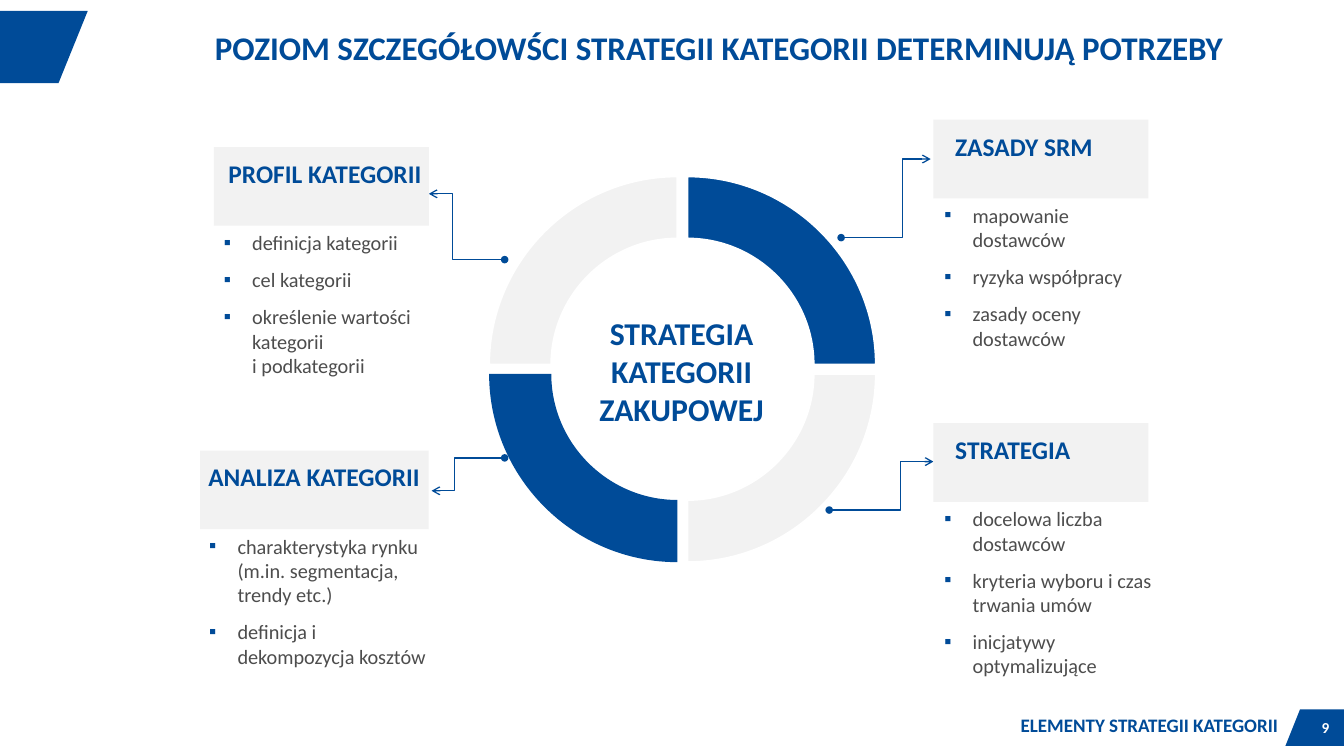
from lxml.etree import SubElement
from pptx import Presentation
from pptx.dml.color import RGBColor
from pptx.enum.shapes import MSO_CONNECTOR, MSO_SHAPE
from pptx.enum.text import MSO_ANCHOR, MSO_AUTO_SIZE, PP_ALIGN
from pptx.oxml.ns import qn
from pptx.util import Inches, Pt

BLUE = RGBColor(0x00, 0x4B, 0x98)
LIGHT = RGBColor(0xF2, 0xF2, 0xF2)
GREY = RGBColor(0x4D, 0x4D, 0x4D)
WHITE = RGBColor(0xFF, 0xFF, 0xFF)

TITLE = {"size": Pt(26), "bold": True}
FOOTER = {"size": Pt(15), "bold": True}
NUMBER = {"size": Pt(12), "bold": True}
CENTRE = {"size": Pt(25), "bold": True}
HEADING = {"size": Pt(20), "bold": True}
ITEM = {"size": Pt(16), "bold": False}

CARDS = [
    {"box": (2.34, 1.61, 2.35), "head": (-0.03, 2.41), "body": (0.01, 2.34),
     "title": "PROFIL KATEGORII",
     "items": ["definicja kategorii", "cel kategorii",
               "określenie wartości kategorii\ni podkategorii"]},
    {"box": (2.19, 4.93, 2.5), "head": (-0.1, 2.63), "body": (0, 2.7),
     "title": "ANALIZA KATEGORII",
     "items": ["charakterystyka rynku (m.in. segmentacja, trendy etc.)",
               "definicja i dekompozycja kosztów"]},
    {"box": (10.21, 1.31, 2.35), "head": (0.05, 2.36), "body": (0.02, 2.34),
     "title": "ZASADY SRM",
     "items": ["mapowanie dostawców", "ryzyka współpracy", "zasady oceny dostawców"]},
    {"box": (10.21, 4.63, 2.35), "head": (0.05, 2.33), "body": (0.02, 2.52),
     "title": "STRATEGIA",
     "items": ["docelowa liczba dostawców", "kryteria wyboru i czas trwania umów",
               "inicjatywy optymalizujące"]},
]
ARROWS = [(4.69, 2.12, 5.52, 2.84), (4.72, 5.37, 5.52, 5.01),
          (10.18, 1.74, 9.2, 2.6), (10.21, 5.05, 9.07, 5.58)]


def format_text(p, font, color):
    """Apply a font format and a colour to every run of a paragraph."""
    for r in p.runs:
        r.font.name = "Calibri"
        r.font.color.rgb = color
        for name, value in font.items():
            setattr(r.font, name, value)


def fill_frame(sp, lines, font, color=BLUE, inset=(0.1, 0.05), **paragraph):
    """Write lines as paragraphs into a shape and return its paragraphs."""
    tf = sp.text_frame
    tf.word_wrap = True
    tf.auto_size = MSO_AUTO_SIZE.NONE
    tf.vertical_anchor = MSO_ANCHOR.TOP
    tf.margin_left = tf.margin_right = Inches(inset[0])
    tf.margin_top = tf.margin_bottom = Inches(inset[1])
    for i, line in enumerate(lines):
        p = tf.add_paragraph() if i else tf.paragraphs[0]
        p.text = line
        for name, value in paragraph.items():
            setattr(p, name, value)
        format_text(p, font, color)
    return tf.paragraphs


def add_text(s, box, lines, font, **options):
    """Add a text box at the given box and return its paragraphs."""
    return fill_frame(s.shapes.add_textbox(*map(Inches, box)), lines, font, **options)


def set_indent(p, left, first=0):
    """Set the left margin and first-line indent of a paragraph."""
    pPr = p._p.get_or_add_pPr()
    pPr.set("marL", str(Inches(left)))
    pPr.set("indent", str(Inches(first)))
    return pPr


def add_bullet(p):
    """Give a paragraph a blue square bullet."""
    pPr = set_indent(p, 0.31, -0.31)
    SubElement(SubElement(pPr, qn("a:buClr")), qn("a:srgbClr"), val=str(BLUE))
    SubElement(pPr, qn("a:buFont"), typeface="Calibri")
    SubElement(pPr, qn("a:buChar"), char="▪")


def add_outline(s, points, color):
    """Add a closed filled outline through points in inches."""
    (x, y), *rest = [(Inches(px), Inches(py)) for px, py in points]
    builder = s.shapes.build_freeform(x, y)
    builder.add_line_segments(rest, close=True)
    sp = builder.convert_to_shape()
    sp.shadow.inherit = False
    sp.fill.solid()
    sp.fill.fore_color.rgb = color
    sp.line.fill.background()
    return sp


def curve_segments(sp, starts):
    """Turn each run of three segments from the given indexes into a curve."""
    segments = list(sp._element.spPr.iter(qn("a:lnTo")))
    for start in starts:
        first, *others = segments[start:start + 3]
        first.tag = qn("a:cubicBezTo")
        for segment in others:
            first.append(segment[0])
            segment.getparent().remove(segment)


def add_header(s, x, y, w, h):
    """Place the slanted corner and the slide title."""
    add_outline(s, [(0, 0.12), (0.96, 0.12), (0.64, 0.91), (0, 0.91)], BLUE)
    sp = s.shapes.title
    sp.left, sp.top, sp.width, sp.height = map(Inches, (x, y, w, h))
    fill_frame(sp, ["POZIOM SZCZEGÓŁOWŚCI STRATEGII KATEGORII DETERMINUJĄ POTRZEBY"],
               TITLE, inset=(0.11, 0.05), alignment=PP_ALIGN.LEFT, line_spacing=0.9)


def add_footer(s, x, y, w, h):
    """Place the footer text, the slanted corner and the page number."""
    right, bottom = x + w, y + h
    add_outline(s, [(right, bottom), (right - 0.64, bottom),
                    (right - 0.48, y), (right, y)], BLUE)
    add_text(s, (right - 0.82, y + 0.05, 0.77, 0.32), ["9"], NUMBER, color=WHITE,
             inset=(0.11, 0.05), alignment=PP_ALIGN.RIGHT)
    add_text(s, (x, y + 0.04, w - 0.61, 0.32), ["ELEMENTY STRATEGII KATEGORII"],
             FOOTER, inset=(0.11, 0.05), alignment=PP_ALIGN.RIGHT, line_spacing=0.8)


def add_quarter(s, x, y, dx, dy, color, outer=2.06, inner=1.38, bend=0.55):
    """Draw a ring quarter opening from a corner in the direction dx, dy."""
    arc = [(1, 0), (1, bend), (bend, 1), (0, 1)]
    points = [(inner * u, inner * v) for u, v in arc]
    points += [(outer * u, outer * v) for u, v in reversed(arc)]
    sp = add_outline(s, [(x + dx * u, y + dy * v) for u, v in points], color)
    curve_segments(sp, (0, 4))
    return sp


def add_ring(s, left, top, right, bottom):
    """Draw four ring quarters around the corners of a box, with a caption."""
    for x, dx in ((left, -1), (right, 1)):
        for y, dy in ((top, -1), (bottom, 1)):
            sp = add_quarter(s, x, y, dx, dy, LIGHT if dx == dy else BLUE)
            if (dx, dy) != (-1, 1):
                sp.line.color.rgb = WHITE
                sp.line.width = Pt(1.5)
    add_text(s, (left - 1.12, top - 0.62, 2.33, 1.39), ["STRATEGIA KATEGORII ZAKUPOWEJ"],
             CENTRE, inset=(0.11, 0.06), alignment=PP_ALIGN.CENTER)


def add_arrow(s, x1, y1, x2, y2):
    """Join a card to the ring with an elbow, arrow at the card and dot at the ring."""
    sp = s.shapes.add_connector(MSO_CONNECTOR.ELBOW, *map(Inches, (x1, y1, x2, y2)))
    sp.line.color.rgb = BLUE
    sp.line.width = Pt(1)
    spPr = sp._element.spPr
    SubElement(spPr.find(qn("a:prstGeom")).find(qn("a:avLst")), qn("a:gd"),
               name="adj1", fmla="val 31500")
    ln = sp.line._get_or_add_ln()
    SubElement(ln, qn("a:headEnd"), type="arrow")
    SubElement(ln, qn("a:tailEnd"), type="oval")
    SubElement(spPr, qn("a:effectLst"))


def add_card(s, card):
    """Place a heading bar with its bulleted list below."""
    x, y, w = card["box"]
    h = 0.86
    sp = s.shapes.add_shape(MSO_SHAPE.RECTANGLE, *map(Inches, (x, y, w, h)))
    sp.shadow.inherit = False
    sp.fill.solid()
    sp.fill.fore_color.rgb = LIGHT
    sp.line.fill.background()
    dx, width = card["head"]
    for p in add_text(s, (x + dx, y + 0.07, width, 0.75), [card["title"]], HEADING):
        set_indent(p, 0.09)
    dx, width = card["body"]
    for p in add_text(s, (x + dx, y + h, width, 1.23), card["items"], ITEM,
                      color=GREY, space_after=Pt(10)):
        add_bullet(p)


def main():
    """Build the slide and save it."""
    prs = Presentation()
    prs.slide_width, prs.slide_height = Inches(14.7), Inches(8.27)
    s = prs.slides.add_slide(prs.slide_layouts[5])
    add_header(s, 2.24, 0.3, 11.85, 0.53)
    add_footer(s, 7.54, 7.76, 7.16, 0.4)
    add_ring(s, 7.41, 3.99, 7.52, 4.09)
    for arrow in ARROWS:
        add_arrow(s, *arrow)
    for card in CARDS:
        add_card(s, card)
    prs.save("out.pptx")


if __name__ == "__main__":
    main()
